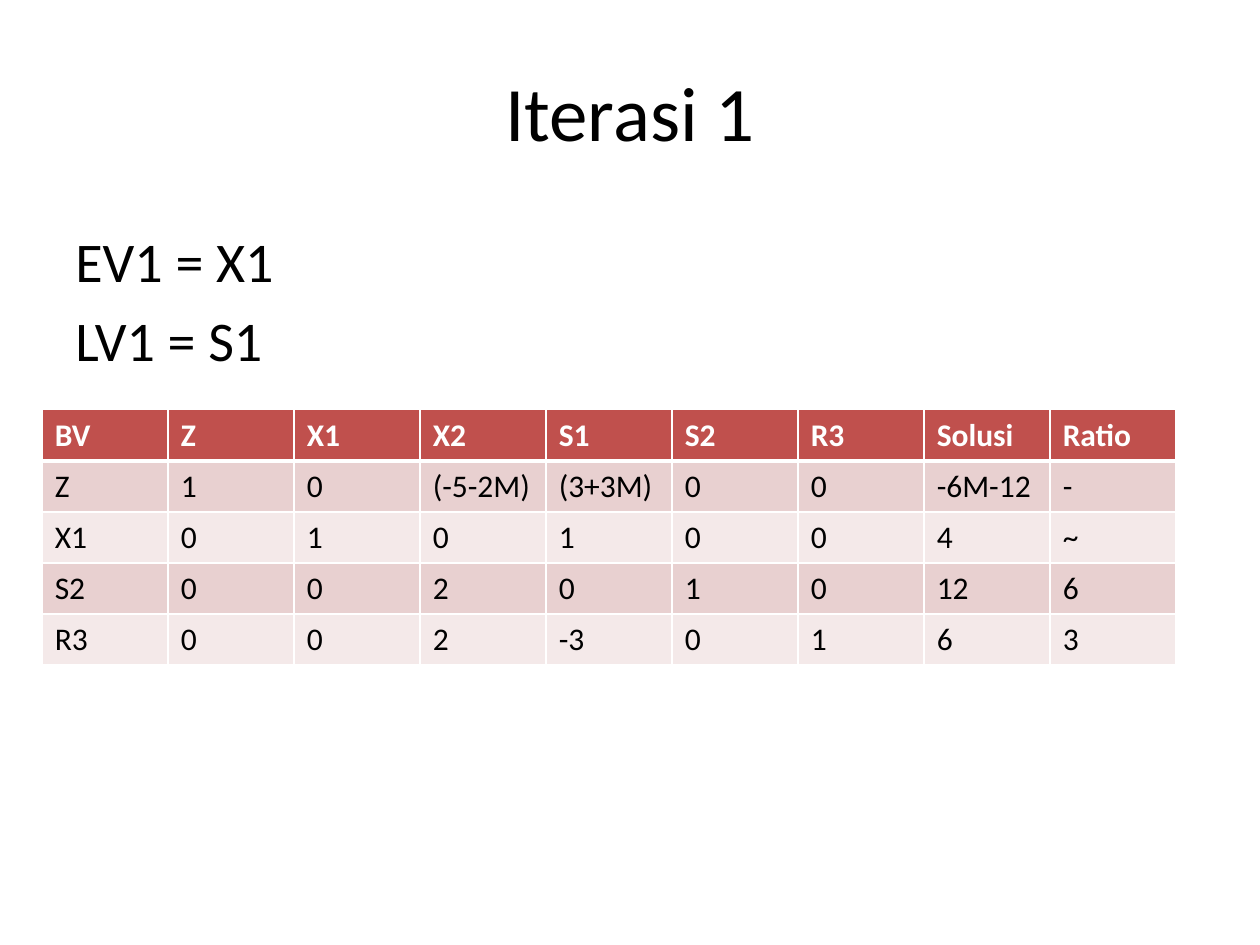
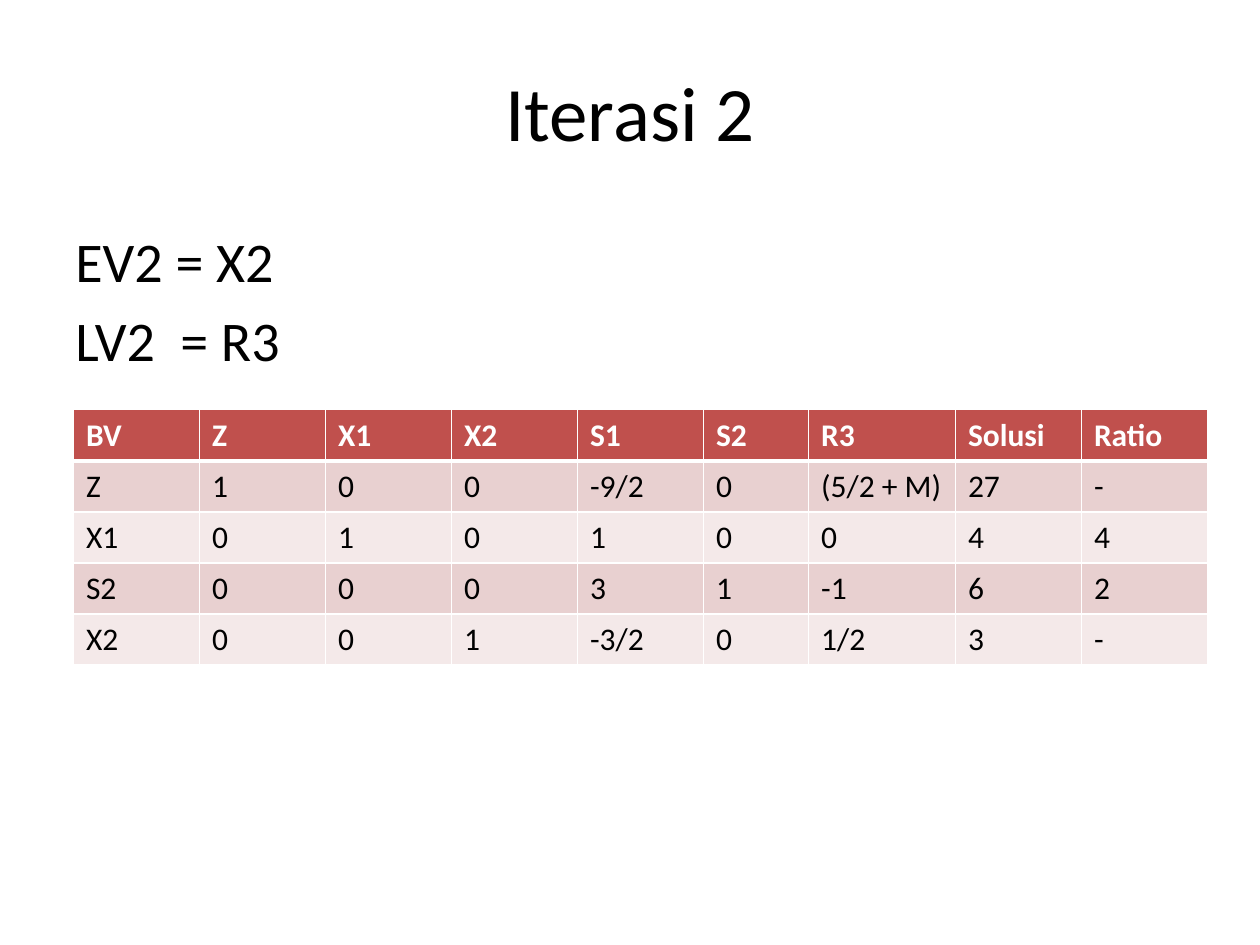
import pptx
import pptx.dml.color
import pptx.enum.text
import pptx.oxml.ns
import pptx.util
from lxml import etree

Cm = pptx.util.Cm
Pt = pptx.util.Pt

# Shared style
FONT = "Calibri"
COLORS = {
    "background": "FFFFFF",
    "text": "000000",
    "header": "C0504D",
    "header_text": "FFFFFF",
    "band_dark": "E8D0D0",
    "band_light": "F4E9E9",
    "border": "FFFFFF",
}
HEADINGS = ["BV", "Z", "X1", "X2", "S1", "S2", "R3", "Solusi", "Ratio"]
COLUMN_WIDTH = 2.54
ROW_HEIGHT = 1.03

# Content of each iteration; widths lists only columns that differ
ITERATIONS = [
    {
        "title": "Iterasi 1",
        "variables": ["EV1 = X1", "LV1 = S1"],
        "left": 0.85,
        "widths": {},
        "rows": [
            ["Z", "1", "0", "(-5-2M)", "(3+3M)", "0", "0", "-6M-12", "-"],
            ["X1", "0", "1", "0", "1", "0", "0", "4", "~"],
            ["S2", "0", "0", "2", "0", "1", "0", "12", "6"],
            ["R3", "0", "0", "2", "-3", "0", "1", "6", "3"],
        ],
    },
    {
        "title": "Iterasi 2",
        "variables": ["EV2 = X2", "LV2  = R3"],
        "left": 1.48,
        "widths": {"S2": 2.12, "R3": 2.96},
        "rows": [
            ["Z", "1", "0", "0", "-9/2", "0", "(5/2 + M)", "27", "-"],
            ["X1", "0", "1", "0", "1", "0", "0", "4", "4"],
            ["S2", "0", "0", "0", "3", "1", "-1", "6", "2"],
            ["X2", "0", "0", "1", "-3/2", "0", "1/2", "3", "-"],
        ],
    },
]


def rgb(name):
    return pptx.dml.color.RGBColor.from_string(COLORS[name])


def add_run(paragraph, text, size, color="text", bold=False):
    run = paragraph.add_run()
    run.text = text
    run.font.name = FONT
    run.font.size = Pt(size)
    run.font.bold = bold
    run.font.color.rgb = rgb(color)


def add_text_frame(slide, top, height):
    frame = slide.shapes.add_textbox(Cm(1.27), Cm(top), Cm(22.86), Cm(height)).text_frame
    frame.word_wrap = True
    return frame


def add_title(slide, title):
    frame = add_text_frame(slide, 0.64, 3.18)
    frame.vertical_anchor = pptx.enum.text.MSO_ANCHOR.MIDDLE
    heading = frame.paragraphs[0]
    heading.alignment = pptx.enum.text.PP_ALIGN.CENTER
    add_run(heading, title, 44)


def add_variables(slide, variables):
    frame = add_text_frame(slide, 4.45, 12.57)
    for index, variable in enumerate(variables):
        line = frame.add_paragraph() if index else frame.paragraphs[0]
        line.space_before = Pt(6.4)
        properties = line._p.get_or_add_pPr()
        properties.set("marL", str(Cm(0.95)))
        properties.set("indent", str(-Cm(0.95)))
        add_run(line, variable, 32)


def set_borders(cell, widths):
    properties = cell._tc.get_or_add_tcPr()
    for side, width in widths.items():
        border = etree.SubElement(
            properties, pptx.oxml.ns.qn(f"a:ln{side}"), w=str(Pt(width)))
        fill = etree.SubElement(border, pptx.oxml.ns.qn("a:solidFill"))
        etree.SubElement(fill, pptx.oxml.ns.qn("a:srgbClr"), val=COLORS["border"])


def add_tableau(slide, left, special_widths, rows):
    widths = [special_widths.get(name, COLUMN_WIDTH) for name in HEADINGS]
    tableau_rows = [HEADINGS] + rows
    tableau = slide.shapes.add_table(
        len(tableau_rows), len(HEADINGS), Cm(left), Cm(8.26),
        Cm(sum(widths)), Cm(ROW_HEIGHT * len(tableau_rows))).table
    for column, width in zip(tableau.columns, widths):
        column.width = Cm(width)
    for r, values in enumerate(tableau_rows):
        tableau.rows[r].height = Cm(ROW_HEIGHT)
        is_header = r == 0
        band = "header" if is_header else "band_dark" if r % 2 else "band_light"
        for c, value in enumerate(values):
            cell = tableau.cell(r, c)
            # A thick rule separates the header from the body
            set_borders(cell, {"L": 1, "R": 1, "T": 3 if r == 1 else 1,
                               "B": 3 if is_header else 1})
            cell.fill.solid()
            cell.fill.fore_color.rgb = rgb(band)
            add_run(cell.text_frame.paragraphs[0], value, 18,
                    "header_text" if is_header else "text", is_header)


def main():
    deck = pptx.Presentation()
    deck.slide_width, deck.slide_height = Cm(25.4), Cm(19.05)
    for iteration in ITERATIONS:
        slide = deck.slides.add_slide(deck.slide_layouts[6])
        slide.background.fill.solid()
        slide.background.fill.fore_color.rgb = rgb("background")
        add_title(slide, iteration["title"])
        add_variables(slide, iteration["variables"])
        add_tableau(slide, iteration["left"], iteration["widths"], iteration["rows"])
    deck.save("out.pptx")


if __name__ == "__main__":
    main()
